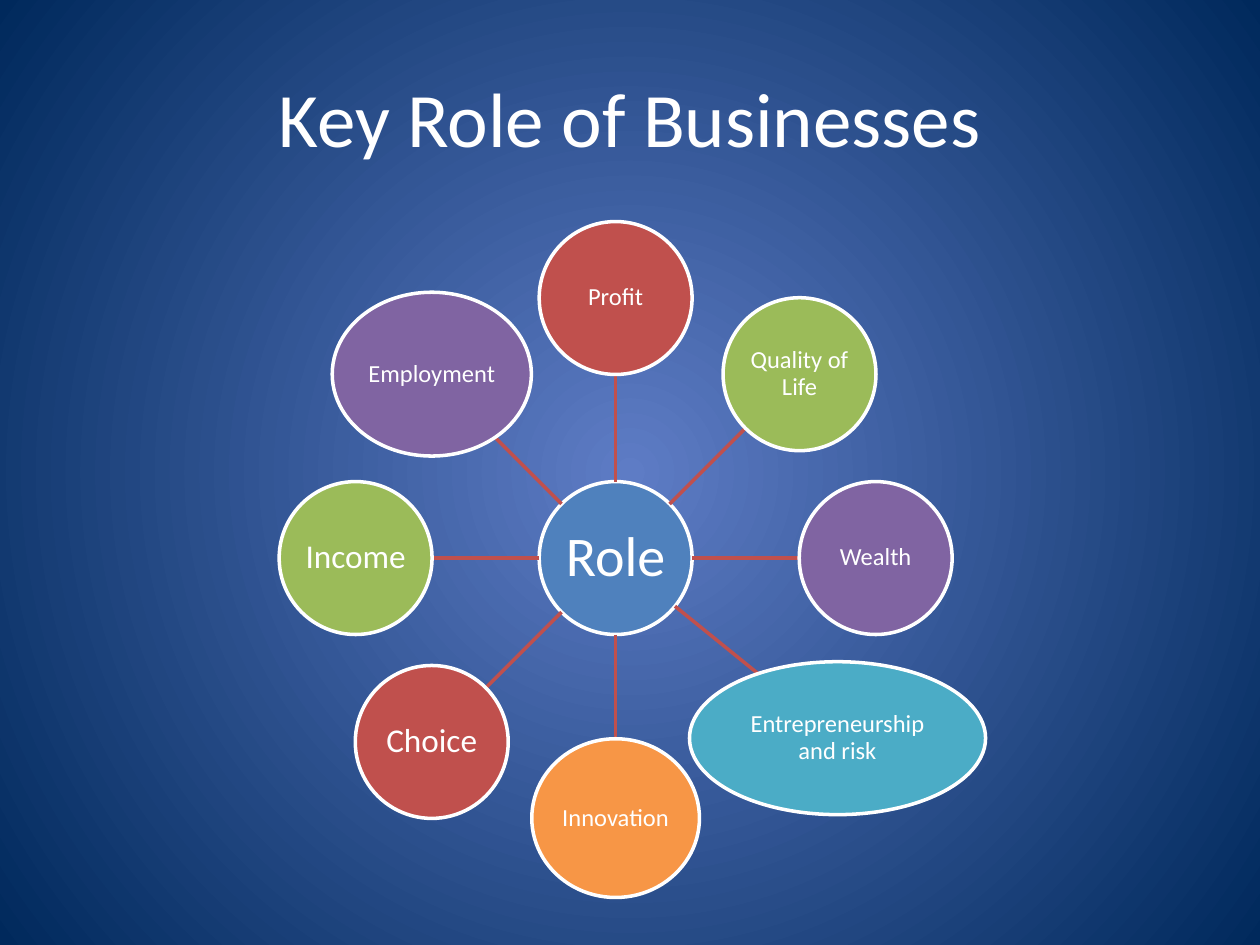
from math import cos, hypot, radians, sin

from lxml import etree
from pptx import Presentation
from pptx.dml.color import RGBColor
from pptx.enum.shapes import MSO_CONNECTOR, MSO_SHAPE
from pptx.enum.text import MSO_ANCHOR, PP_ALIGN
from pptx.oxml.ns import qn
from pptx.util import Pt

OVAL, STRAIGHT = MSO_SHAPE.OVAL, MSO_CONNECTOR.STRAIGHT
CENTER, MIDDLE = PP_ALIGN.CENTER, MSO_ANCHOR.MIDDLE

WHITE = RGBColor(0xFF, 0xFF, 0xFF)
GLOW = RGBColor(0x5E, 0x7C, 0xC5)
NAVY = RGBColor(0x00, 0x29, 0x5C)
BLUE = RGBColor(0x4F, 0x81, 0xBD)
RED = RGBColor(0xC0, 0x50, 0x4D)
GREEN = RGBColor(0x9B, 0xBB, 0x59)
PURPLE = RGBColor(0x80, 0x64, 0xA2)
TEAL = RGBColor(0x4B, 0xAC, 0xC6)
ORANGE = RGBColor(0xF7, 0x96, 0x46)

HUB_X, HUB_Y = 351.8, 318.9
ORBIT = 148.6
DIAMETER = 87.4
LINE_WIDTH = 2
STEP = 45  # degrees between neighbouring roles

# Clockwise from the top: label, colour, text size, width, height
ROLES = [
    ("Profit", RED, 14, DIAMETER, DIAMETER),
    ("Quality of Life", GREEN, 14, DIAMETER, DIAMETER),
    ("Wealth", PURPLE, 14, DIAMETER, DIAMETER),
    ("Entrepreneurship and risk", TEAL, 14, 169.2, DIAMETER),
    ("Innovation", ORANGE, 14, 95.8, 90.7),
    ("Choice", RED, 19, DIAMETER, DIAMETER),
    ("Income", GREEN, 19, DIAMETER, DIAMETER),
    ("Employment", PURPLE, 14, 113.8, 93.6),
]
# The widest oval sits off the orbit
OFFSETS = {"Entrepreneurship and risk": (126.8, 102.9)}


def apply_format(target, values):
    for attribute, value in values.items():
        setattr(target, attribute, value)


def set_background(slide):
    fill = slide.background.fill
    fill.gradient()
    for stop, color, position in zip(fill.gradient_stops, (GLOW, NAVY), (0, 1)):
        stop.color.rgb = color
        stop.position = position
    # Radial instead of linear shading
    gradient = slide.element.find(".//" + qn("a:gradFill"))
    linear = gradient.find(qn("a:lin"))
    radial = etree.Element(qn("a:path"), {"path": "circle"})
    etree.SubElement(radial, qn("a:fillToRect"),
                     dict.fromkeys("ltrb", "50000"))
    gradient.replace(linear, radial)


def write_text(shape, text, size, margin, spacing):
    frame = shape.text_frame
    apply_format(frame, {"text": text, "word_wrap": True,
                         "vertical_anchor": MIDDLE})
    apply_format(frame, {f"margin_{side}": Pt(margin)
                         for side in ("left", "top", "right", "bottom")})
    paragraph = frame.paragraphs[0]
    apply_format(paragraph, {"alignment": CENTER, "line_spacing": spacing})
    font = paragraph.runs[0].font
    apply_format(font, {"name": "Calibri", "size": Pt(size)})
    font.color.rgb = WHITE


def add_title(slide, text):
    title = slide.shapes.title
    apply_format(title, {"left": Pt(36), "top": Pt(21.6),
                         "width": Pt(648), "height": Pt(90)})
    write_text(title, text, 44, 3.6, 1.0)


def add_bubble(slide, x, y, width, height, label, color, size, margin):
    bubble = slide.shapes.add_shape(OVAL, Pt(x - width / 2), Pt(y - height / 2),
                                    Pt(width), Pt(height))
    bubble.shadow.inherit = False
    bubble.fill.solid()
    bubble.fill.fore_color.rgb = color
    bubble.line.color.rgb = WHITE
    bubble.line.width = Pt(LINE_WIDTH)
    write_text(bubble, label, size, margin, 0.9)


def add_spoke(slide, dx, dy, width, height):
    """Join the rim of the hub to the rim of the oval at offset dx, dy."""
    distance = hypot(dx, dy)
    ux, uy = dx / distance, dy / distance
    start = DIAMETER / 2
    end = distance - 1 / hypot(2 * ux / width, 2 * uy / height)
    spoke = slide.shapes.add_connector(
        STRAIGHT,
        Pt(HUB_X + ux * start), Pt(HUB_Y + uy * start),
        Pt(HUB_X + ux * end), Pt(HUB_Y + uy * end))
    spoke.line.color.rgb = RED
    spoke.line.width = Pt(LINE_WIDTH)
    etree.SubElement(spoke.element.spPr, qn("a:effectLst"))


def main():
    presentation = Presentation()
    apply_format(presentation, {"slide_width": Pt(720), "slide_height": Pt(540)})
    slide = presentation.slides.add_slide(presentation.slide_layouts[5])
    set_background(slide)
    add_title(slide, "Key Role of Businesses")

    # Hub, then each role with its spoke
    add_bubble(slide, HUB_X, HUB_Y, DIAMETER, DIAMETER, "Role", BLUE, 32, 1.6)
    for index, (label, color, size, width, height) in enumerate(ROLES):
        angle = radians(index * STEP - 90)
        on_orbit = (ORBIT * cos(angle), ORBIT * sin(angle))
        dx, dy = OFFSETS.get(label, on_orbit)
        add_spoke(slide, dx, dy, width, height)
        add_bubble(slide, HUB_X + dx, HUB_Y + dy, width, height,
                   label, color, size, 0.7)

    presentation.save("out.pptx")


if __name__ == "__main__":
    main()
